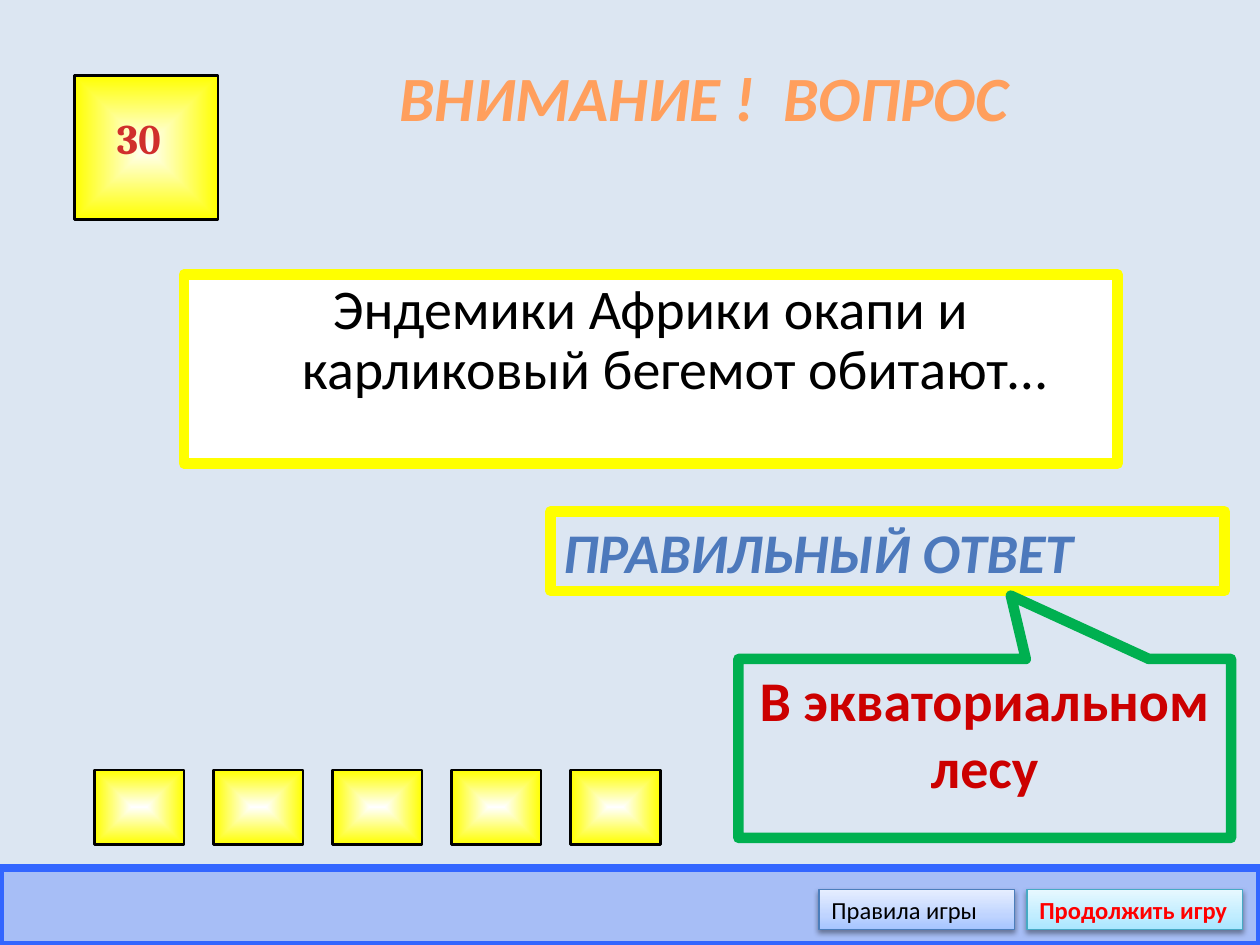
from pptx import Presentation
from pptx.dml.color import RGBColor
from pptx.enum.shapes import MSO_SHAPE
from pptx.enum.text import MSO_ANCHOR, PP_ALIGN
from pptx.oxml import parse_xml
from pptx.oxml.ns import nsdecls, qn
from pptx.util import Inches, Pt

RECT = MSO_SHAPE.RECTANGLE
BUTTON = MSO_SHAPE.ACTION_BUTTON_CUSTOM
CALLOUT = MSO_SHAPE.RECTANGULAR_CALLOUT
TOP, MIDDLE = MSO_ANCHOR.TOP, MSO_ANCHOR.MIDDLE
LEFT, CENTER = PP_ALIGN.LEFT, PP_ALIGN.CENTER

PALE = RGBColor(0xDC, 0xE6, 0xF2)
WHITE = RGBColor(0xFF, 0xFF, 0xFF)
BLACK = RGBColor(0, 0, 0)
YELLOW = RGBColor(0xFF, 0xFF, 0)
GREEN = RGBColor(0, 0xB0, 0x50)
BLUE = RGBColor(0x33, 0x66, 0xFF)
RED = RGBColor(0xFF, 0, 0)
DARK_RED = RGBColor(0xCC, 0, 0)
SCORE_RED = RGBColor(0xD0, 0x2F, 0x2C)
ORANGE = RGBColor(0xFF, 0x9F, 0x5D)
ANSWER_BLUE = RGBColor(0x4D, 0x79, 0xBC)
RULES_EDGE = RGBColor(0x4B, 0x7E, 0xBC)
NEXT_EDGE = RGBColor(0x46, 0xAA, 0xC5)

prs = Presentation()
prs.slide_width, prs.slide_height = Inches(10), Inches(7.5)
U = prs.slide_width / 100
s = prs.slides.add_slide(prs.slide_layouts[6])
s.background.fill.solid()
s.background.fill.fore_color.rgb = PALE


def add_box(kind, at, fill=None, line=None, width=0, stops=None, shade=""):
    x, y, w, h = (round(v * U) for v in at)
    if kind is None:
        return s.shapes.add_textbox(x, y, w, h)
    sp = s.shapes.add_shape(kind, x, y, w, h)
    if stops:
        gs = "".join(f'<a:gs pos="{pos * 1000}"><a:srgbClr val="{c}"/></a:gs>'
                     for pos, c in stops)
        sp.element.spPr.append(parse_xml(
            f'<a:gradFill {nsdecls("a")} rotWithShape="1">'
            f'<a:gsLst>{gs}</a:gsLst>{shade}</a:gradFill>'))
    else:
        sp.fill.solid()
        sp.fill.fore_color.rgb = fill
    sp.line.color.rgb = line
    sp.line.width = Pt(width)
    sp.shadow.inherit = False
    return sp


def write(sp, text, size, color, bold=False, italic=False,
          align=LEFT, anchor=TOP, font="Calibri"):
    tf = sp.text_frame
    tf.word_wrap = True
    tf.vertical_anchor = anchor
    p = tf.paragraphs[0]
    p.text = text
    p.alignment = align
    p.font.name, p.font.size = font, Pt(size)
    p.font.bold, p.font.italic = bold, italic
    p.font.color.rgb = color
    return p


title = add_box(None, (24, 3, 63.8, 9.3))
write(title, "ВНИМАНИЕ !  ВОПРОС", 36, ORANGE, True, True, CENTER, MIDDLE)

question = add_box(RECT, (14.6, 21.8, 74.1, 15), WHITE, YELLOW, 6)
p = write(question, "Эндемики Африки окапи и карликовый бегемот обитают…",
          32, BLACK, align=CENTER)
p.line_spacing = 0.9
p.space_before = Pt(6.4)
pPr = p._p.get_or_add_pPr()
pPr.set("marL", str(Inches(0.38)))
pPr.set("indent", str(-Inches(0.38)))

glow = [(0, "FFFFFF"), (100, "FFFF00")]
from_centre = ('<a:path path="rect"><a:fillToRect l="50000" t="50000" '
               'r="50000" b="50000"/></a:path>')
tiles = [(5.9, 6, 11.4, 11.4)]
tiles += [(7.5 + 9.45 * i, 61.1, 7.1, 5.9) for i in range(5)]
for at in tiles:
    add_box(BUTTON, at, line=BLACK, width=1.5, stops=glow, shade=from_centre)

score = add_box(None, (8.3, 8.4, 6.3, 6.3))
write(score, "30", 24, SCORE_RED, True, font="Cambria")

answer = add_box(RECT, (43.7, 40.6, 53.5, 6.3), PALE, YELLOW, 6)
write(answer, "ПРАВИЛЬНЫЙ ОТВЕТ", 32, ANSWER_BLUE, True, True, anchor=MIDDLE)

callout = add_box(CALLOUT, (58.6, 52.3, 39.1, 14.2), PALE, GREEN, 6)
callout.rotation = 180
callout.adjustments[0] = -0.053
callout.adjustments[1] = 0.854
write(callout, "В экваториальном лесу", 32, DARK_RED, True, align=CENTER)
callout.element.txBody.bodyPr.set("rot", "10800000")

bar = add_box(RECT, (0, 68.9, 100, 6.1), BLUE, BLUE, 4.5)
bar.element.spPr.find(".//" + qn("a:srgbClr")).append(
    parse_xml(f'<a:alpha {nsdecls("a")} val="31000"/>'))

buttons = [
    ("Правила игры", 65, 15.5, ("A4C4FF", "BFD4FF", "E6EEFF"),
     RULES_EDGE, BLACK, False),
    ("Продолжить игру", 81.5, 17.1, ("A7E6FF", "C1EDFF", "E7F8FF"),
     NEXT_EDGE, RED, True),
]
for text, x, w, colors, edge, color, bold in buttons:
    sp = add_box(RECT, (x, 70.6, w, 3.2), line=edge, width=0.75,
                 stops=list(zip((0, 35, 100), colors)),
                 shade='<a:lin ang="16200000" scaled="1"/>')
    sp.element.spPr.find(qn("a:effectLst")).append(parse_xml(
        f'<a:outerShdw {nsdecls("a")} blurRad="{Pt(3.1)}" dist="{Pt(1.6)}" '
        'dir="5400000" rotWithShape="0"><a:srgbClr val="000000">'
        '<a:alpha val="38000"/></a:srgbClr></a:outerShdw>'))
    write(sp, text, 14, color, bold, anchor=MIDDLE)
    sp.text_frame.margin_right = 0

prs.save("out.pptx")
